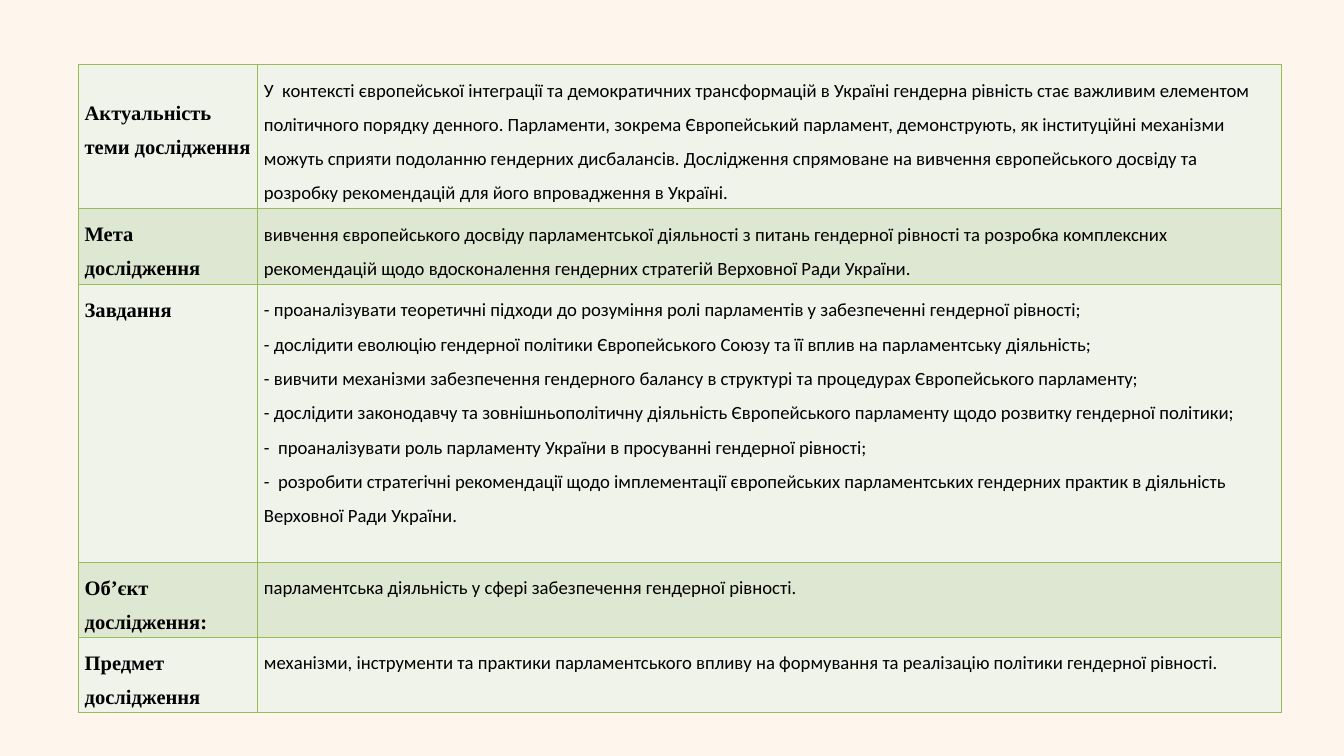
from lxml.etree import SubElement
from pptx import Presentation
from pptx.dml.color import RGBColor
from pptx.oxml.ns import qn
from pptx.util import Emu, Pt

EMU_PER_PX = 9525
BACKGROUND = "FEF5ED"
BORDER = "9BBB59"
TEXT_COLOR = "000000"
BAND_FILLS = ("EFF3EA", "DEE7D1")
COLUMN_WIDTHS = (256, 1463)
CELL_MARGINS = {"margin_left": 9, "margin_right": 9, "margin_top": 5, "margin_bottom": 5}
LABEL_FONT = {"name": "Times New Roman", "size": Pt(22), "bold": True}
BODY_FONT = {"name": "Calibri", "size": Pt(20), "bold": False}

# Row height, label, body paragraphs
ROWS = [
    (206, "Актуальність теми дослідження", [
        "У  контексті європейської інтеграції та демократичних трансформацій в Україні "
        "гендерна рівність стає важливим елементом політичного порядку денного. "
        "Парламенти, зокрема Європейський парламент, демонструють, як інституційні "
        "механізми можуть сприяти подоланню гендерних дисбалансів. Дослідження "
        "спрямоване на вивчення європейського досвіду та розробку рекомендацій для "
        "його впровадження в Україні.",
    ]),
    (107, "Мета дослідження", [
        "вивчення європейського досвіду парламентської діяльності з питань гендерної "
        "рівності та розробка комплексних рекомендацій щодо вдосконалення гендерних "
        "стратегій Верховної Ради України.",
    ]),
    (397, "Завдання", [
        "- проаналізувати теоретичні підходи до розуміння ролі парламентів у "
        "забезпеченні гендерної рівності;",
        "- дослідити еволюцію гендерної політики Європейського Союзу та її вплив на "
        "парламентську діяльність;",
        "- вивчити механізми забезпечення гендерного балансу в структурі та "
        "процедурах Європейського парламенту;",
        "- дослідити законодавчу та зовнішньополітичну діяльність Європейського "
        "парламенту щодо розвитку гендерної політики;",
        "-  проаналізувати роль парламенту України в просуванні гендерної рівності;",
        "-  розробити стратегічні рекомендації щодо імплементації європейських "
        "парламентських гендерних практик в діяльність Верховної Ради України.",
    ]),
    (107, "Об’єкт дослідження:", [
        "парламентська діяльність у сфері забезпечення гендерної рівності.",
    ]),
    (107, "Предмет дослідження", [
        "механізми, інструменти та практики парламентського впливу на формування та "
        "реалізацію політики гендерної рівності.",
    ]),
]


def px(value):
    return Emu(value * EMU_PER_PX)


def color(value):
    return RGBColor.from_string(value)


def set_fill(fill, value):
    fill.solid()
    fill.fore_color.rgb = color(value)


def set_borders(cell):
    properties = cell._tc.get_or_add_tcPr()
    for side in ("a:lnL", "a:lnR", "a:lnT", "a:lnB"):
        line = SubElement(properties, qn(side), w=str(Pt(1)))
        SubElement(SubElement(line, qn("a:solidFill")), qn("a:srgbClr"), val=BORDER)


def write_cell(cell, paragraphs, font_format, fill):
    for name, value in CELL_MARGINS.items():
        setattr(cell, name, px(value))
    set_borders(cell)
    set_fill(cell.fill, fill)
    cell.text = "\n".join(paragraphs)
    for paragraph in cell.text_frame.paragraphs:
        paragraph.line_spacing = 1.5
        font = paragraph.runs[0].font
        font.color.rgb = color(TEXT_COLOR)
        for name, value in font_format.items():
            setattr(font, name, value)


def add_research_table(slide):
    height = sum(row[0] for row in ROWS)
    table = slide.shapes.add_table(
        len(ROWS), len(COLUMN_WIDTHS), px(112), px(92), px(sum(COLUMN_WIDTHS)), px(height)
    ).table
    table.first_row = False
    table.horz_banding = False
    for column, width in zip(table.columns, COLUMN_WIDTHS):
        column.width = px(width)
    for index, (row_height, label, body) in enumerate(ROWS):
        table.rows[index].height = px(row_height)
        fill = BAND_FILLS[index % 2]
        write_cell(table.cell(index, 0), [label], LABEL_FONT, fill)
        write_cell(table.cell(index, 1), body, BODY_FONT, fill)
    table.cell(0, 0).margin_top = px(38)


def main():
    presentation = Presentation()
    presentation.slide_width = px(1920)
    presentation.slide_height = px(1080)
    slide = presentation.slides.add_slide(presentation.slide_layouts[6])
    set_fill(slide.background.fill, BACKGROUND)
    add_research_table(slide)
    presentation.save("out.pptx")


if __name__ == "__main__":
    main()
